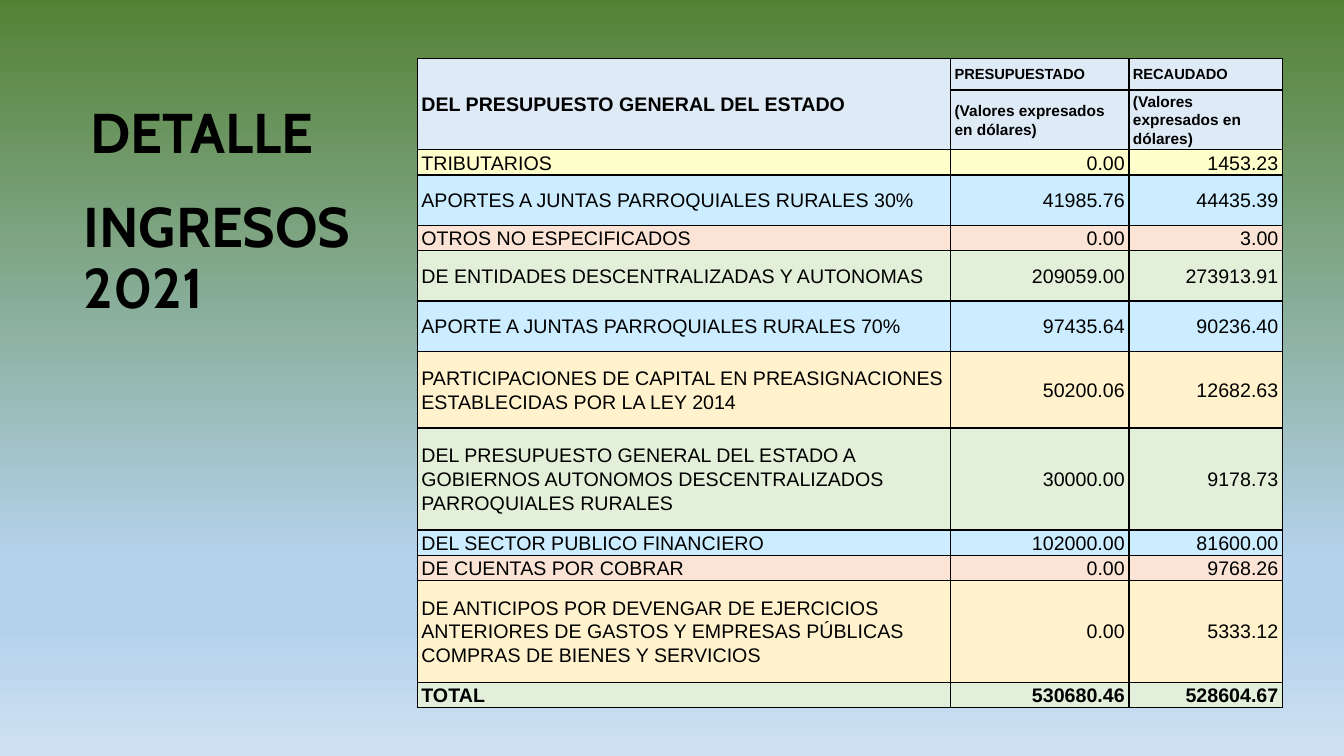
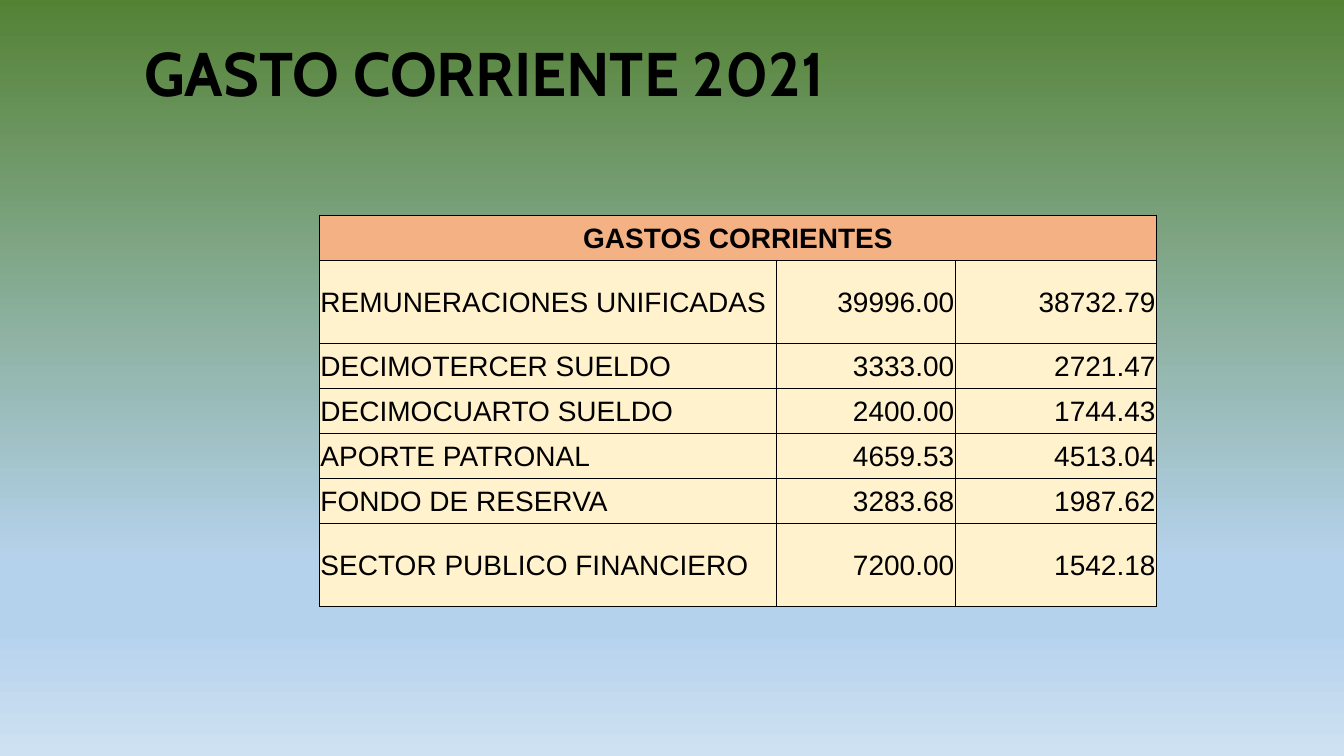
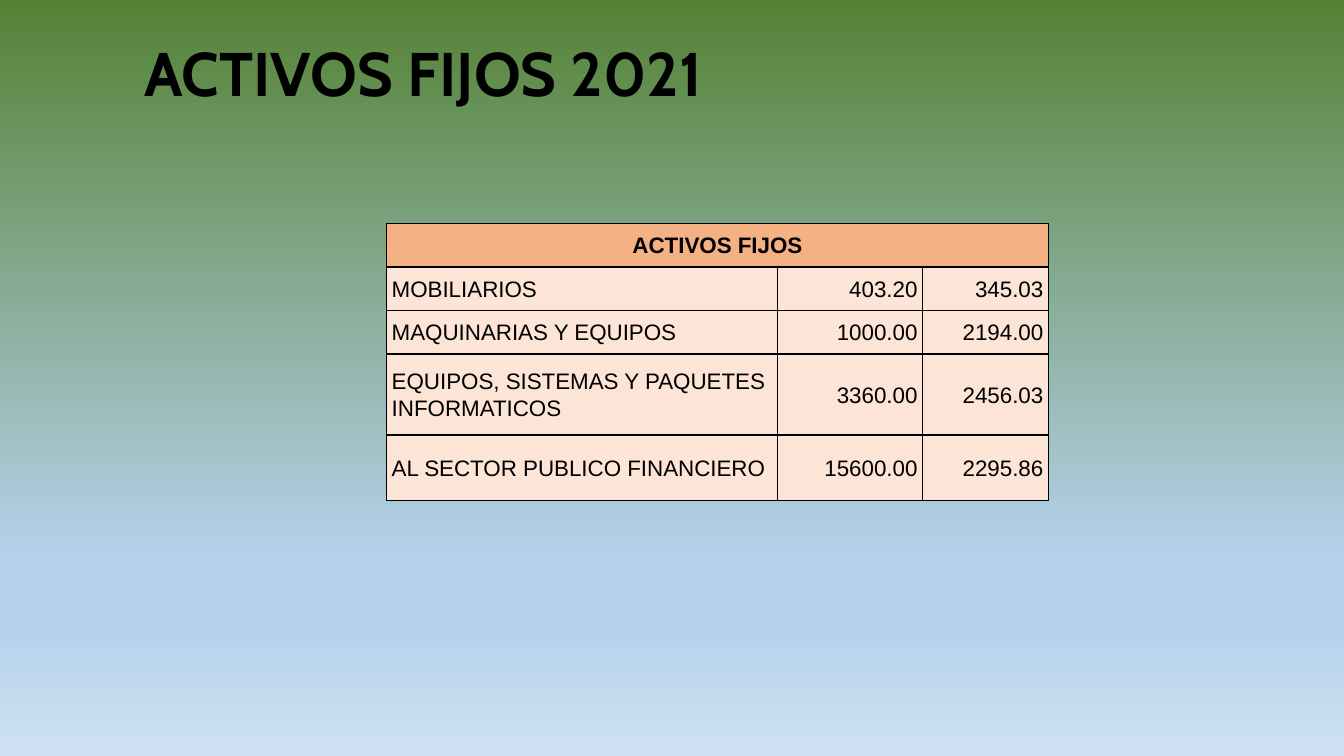
from lxml import etree
from pptx import Presentation
from pptx.dml.color import RGBColor
from pptx.enum.text import MSO_ANCHOR, PP_ALIGN
from pptx.oxml.ns import qn
from pptx.util import Pt

LEFT, CENTER, RIGHT = PP_ALIGN.LEFT, PP_ALIGN.CENTER, PP_ALIGN.RIGHT
TOP, MIDDLE = MSO_ANCHOR.TOP, MSO_ANCHOR.MIDDLE

BLACK = "000000"
BACKGROUND = [(0, "548235"), (74, "B5D2EC"), (83, "B5D2EC"), (100, "CEE1F2")]
HEADING, SALMON, CREAM, PEACH = "DEEBF7", "F4B183", "FFF2CC", "FCE4D6"
YELLOW, BLUE, PINK, GREEN, TOTAL_GREEN = "FFFFCC", "CCECFF", "FBE4D5", "E2EFD9", "E2EFDA"
TITLE_FONT, TABLE_FONT = "Cabin", "Arial"
TITLE_PLACE = (90.7, 22.3, 806.4, 64.1)

HEAD = {"aligns": (LEFT, LEFT, LEFT), "bold": True}
BANNER = {"aligns": (CENTER, CENTER, CENTER), "bold": True}

INCOME_ROWS = [
    (22.5, HEADING, ("DEL PRESUPUESTO GENERAL DEL ESTADO", "PRESUPUESTADO", "RECAUDADO"),
     {**HEAD, "sizes": (14, 10.5, 10.5)}),
    (42.8, HEADING, ("", "(Valores expresados en dólares)", "(Valores expresados en dólares)"),
     {**HEAD, "sizes": (14, 11, 11)}),
    (17.6, YELLOW, ("TRIBUTARIOS", "0.00", "1453.23"), {}),
    (36, BLUE, ("APORTES A JUNTAS PARROQUIALES RURALES 30%", "41985.76", "44435.39"), {}),
    (17.6, PINK, ("OTROS NO ESPECIFICADOS", "0.00", "3.00"), {}),
    (36, GREEN, ("DE ENTIDADES DESCENTRALIZADAS Y AUTONOMAS", "209059.00", "273913.91"), {}),
    (36, BLUE, ("APORTE A JUNTAS PARROQUIALES RURALES 70%", "97435.64", "90236.40"), {}),
    (54.6, CREAM, ("PARTICIPACIONES DE CAPITAL EN PREASIGNACIONES ESTABLECIDAS POR LA LEY 2014",
                   "50200.06", "12682.63"), {}),
    (72.9, GREEN, ("DEL PRESUPUESTO GENERAL DEL ESTADO A GOBIERNOS AUTONOMOS "
                   "DESCENTRALIZADOS PARROQUIALES RURALES", "30000.00", "9178.73"), {}),
    (17.6, BLUE, ("DEL SECTOR PUBLICO FINANCIERO", "102000.00", "81600.00"), {}),
    (17.6, PINK, ("DE CUENTAS POR COBRAR", "0.00", "9768.26"), {}),
    (72.9, CREAM, ("DE ANTICIPOS POR DEVENGAR DE EJERCICIOS ANTERIORES DE GASTOS Y EMPRESAS "
                   "PÚBLICAS COMPRAS DE BIENES Y SERVICIOS", "0.00", "5333.12"), {}),
    (17.6, TOTAL_GREEN, ("TOTAL", "530680.46", "528604.67"), {"bold": True}),
]

EXPENSE_ROWS = [
    (32.2, SALMON, ("GASTOS CORRIENTES", "", ""), BANNER),
    (59.4, CREAM, ("REMUNERACIONES UNIFICADAS", "39996.00", "38732.79"), {}),
    (32.2, CREAM, ("DECIMOTERCER SUELDO", "3333.00", "2721.47"), {}),
    (32.2, CREAM, ("DECIMOCUARTO SUELDO", "2400.00", "1744.43"), {}),
    (32.2, CREAM, ("APORTE PATRONAL", "4659.53", "4513.04"), {}),
    (32.2, CREAM, ("FONDO DE RESERVA", "3283.68", "1987.62"), {}),
    (59.4, CREAM, ("SECTOR PUBLICO FINANCIERO", "7200.00", "1542.18"), {}),
]

ASSET_ROWS = [
    (31.1, SALMON, ("ACTIVOS FIJOS", "", ""), BANNER),
    (31.1, PEACH, ("MOBILIARIOS", "403.20", "345.03"), {}),
    (31.1, PEACH, ("MAQUINARIAS Y EQUIPOS", "1000.00", "2194.00"), {}),
    (57.8, PEACH, ("EQUIPOS, SISTEMAS Y PAQUETES INFORMATICOS", "3360.00", "2456.03"), {}),
    (46.8, PEACH, ("AL SECTOR PUBLICO FINANCIERO", "15600.00", "2295.86"), {}),
]


def color(value):
    """Turn a hex string into a colour."""
    return RGBColor.from_string(value)


def apply(target, values):
    """Set each named attribute on the target."""
    for name, value in values.items():
        setattr(target, name, value)


def write(para, text, font, size, bold):
    """Add one black run of text to a paragraph."""
    span = para.add_run()
    span.text = text
    apply(span.font, {"name": font, "size": Pt(size), "bold": bold})
    span.font.color.rgb = color(BLACK)


def paint_background(deck):
    """Give the slide master the shared vertical gradient."""
    master = deck.slide_master
    fill = master.background.fill
    fill.gradient()
    fill.gradient_angle = 270
    stops = master.element.find(".//" + qn("a:gsLst"))
    stops.clear()
    for position, value in BACKGROUND:
        stop = etree.SubElement(stops, qn("a:gs"), pos=str(position * 1000))
        etree.SubElement(stop, qn("a:srgbClr"), val=value)


def add_page(deck):
    """Add a blank slide."""
    return deck.slides.add_slide(deck.slide_layouts[6])


def add_title(page, place, text, size=44, anchor=MIDDLE, indent=12.2, inset=7.2, spacing=0.9):
    """Add a bold title box."""
    box = page.shapes.add_textbox(*map(Pt, place))
    apply(box.text_frame, {
        "word_wrap": True, "vertical_anchor": anchor, "margin_left": Pt(indent),
        "margin_right": Pt(7.2), "margin_top": Pt(inset), "margin_bottom": Pt(inset)})
    para = box.text_frame.paragraphs[0]
    para.line_spacing = spacing
    write(para, text, TITLE_FONT, size, True)


def add_borders(cell):
    """Draw a thin black line on each side of a cell."""
    properties = cell._tc.get_or_add_tcPr()
    for side in ("lnL", "lnR", "lnT", "lnB"):
        line = etree.SubElement(properties, qn("a:" + side), w=str(Pt(1)))
        fill = etree.SubElement(line, qn("a:solidFill"))
        etree.SubElement(fill, qn("a:srgbClr"), val=BLACK)


def fill_cell(cell, text, shade, size, bold, align, margins, spacing):
    """Format one cell and write its text."""
    add_borders(cell)
    cell.fill.solid()
    cell.fill.fore_color.rgb = color(shade)
    side, top = map(Pt, margins)
    apply(cell, {"margin_left": side, "margin_right": side, "margin_top": top,
                 "margin_bottom": 0, "vertical_anchor": MIDDLE})
    para = cell.text_frame.paragraphs[0]
    apply(para, {"alignment": align, "line_spacing": spacing})
    if text:
        write(para, text, TABLE_FONT, size, bold)


def add_budget_table(page, corner, widths, rows, merge_to, size, margins, spacing=1.07):
    """Add a table whose first cell is merged down or across to a given cell."""
    extent = (sum(widths), sum(row[0] for row in rows))
    frame = page.shapes.add_table(len(rows), len(widths), *map(Pt, corner + extent))
    table = frame.table
    for column, width in zip(table.columns, widths):
        column.width = Pt(width)
    for r, (height, shade, texts, changes) in enumerate(rows):
        table.rows[r].height = Pt(height)
        sizes = changes.get("sizes", (size,) * len(widths))
        aligns = changes.get("aligns", (LEFT, RIGHT, RIGHT))
        bold = changes.get("bold", False)
        for c, text in enumerate(texts):
            fill_cell(table.cell(r, c), text, shade, sizes[c], bold, aligns[c], margins, spacing)
    table.cell(0, 0).merge(table.cell(*merge_to))


def main():
    """Build the three budget slides."""
    deck = Presentation()
    apply(deck, {"slide_width": Pt(960), "slide_height": Pt(540)})
    paint_background(deck)

    page = add_page(deck)
    add_title(page, (47.5, 135.4, 226.8, 177.1), "INGRESOS 2021", size=40, anchor=TOP)
    add_budget_table(page, (298.1, 41.8), (380.9, 127.4, 109.7), INCOME_ROWS,
                     (1, 0), size=14, margins=(2.9, 0))
    add_title(page, (57.6, 66.2, 480.2, 55.4), "DETALLE", size=40, anchor=TOP,
              indent=7.2, inset=3.6, spacing=1.0)

    page = add_page(deck)
    add_title(page, TITLE_PLACE, "GASTO CORRIENTE 2021")
    add_budget_table(page, (228.2, 153.8), (326.6, 127.6, 143.8), EXPENSE_ROWS,
                     (0, 2), size=20, margins=(0.7, 0.7), spacing=1.0)

    page = add_page(deck)
    add_title(page, TITLE_PLACE, "ACTIVOS FIJOS 2021")
    add_budget_table(page, (276.2, 159.6), (279.2, 103.6, 89.9), ASSET_ROWS,
                     (0, 2), size=16, margins=(3.6, 0))

    deck.save("out.pptx")


if __name__ == "__main__":
    main()
